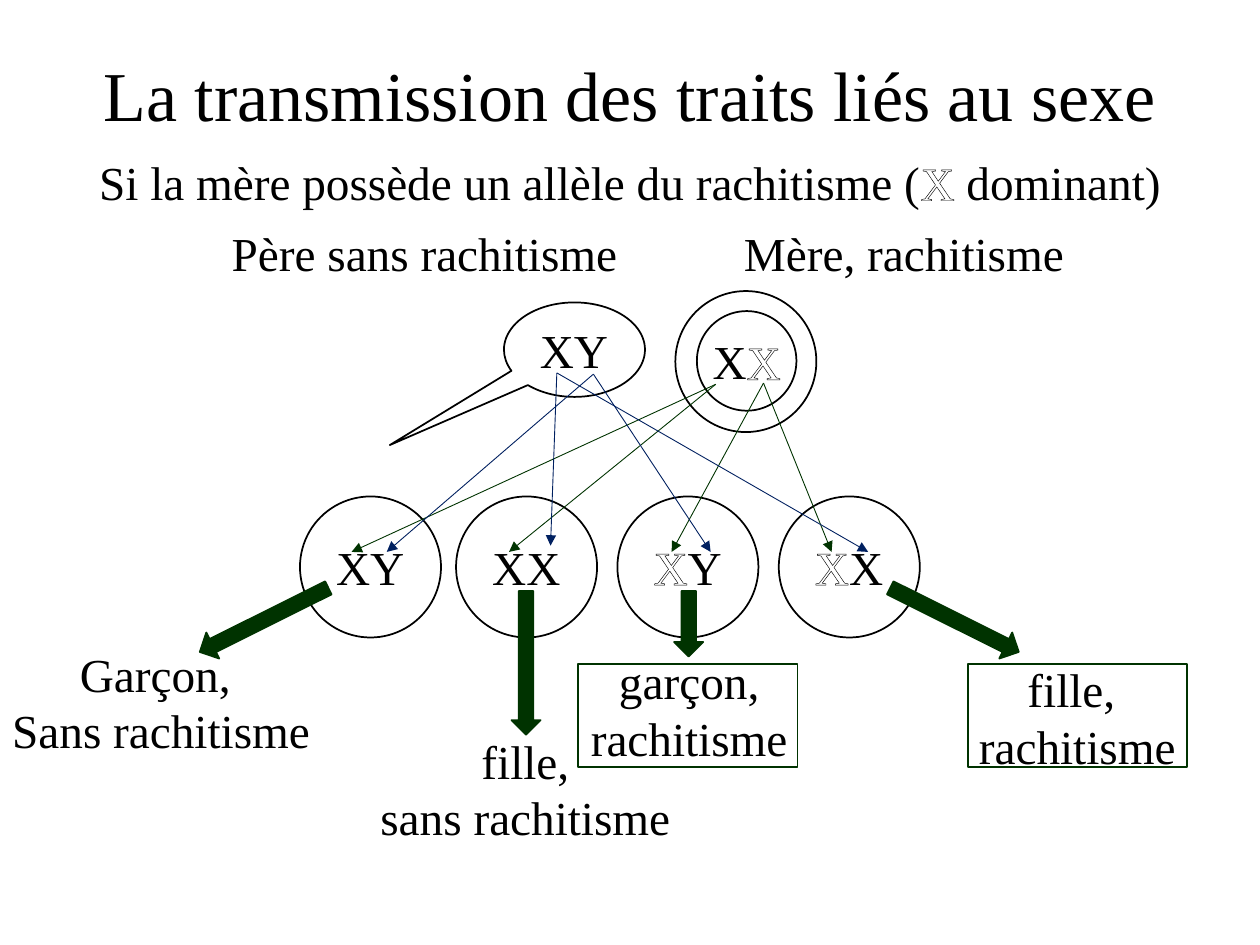
from lxml import etree
from pptx import Presentation
from pptx.dml.color import RGBColor
from pptx.enum.shapes import MSO_CONNECTOR, MSO_SHAPE
from pptx.enum.text import MSO_ANCHOR, MSO_AUTO_SIZE, PP_ALIGN
from pptx.oxml import parse_xml
from pptx.oxml.ns import nsdecls, qn
from pptx.util import Pt

ELLIPSE = MSO_SHAPE.OVAL
CALLOUT = MSO_SHAPE.OVAL_CALLOUT
RECTANGLE = MSO_SHAPE.RECTANGLE
UP_ARROW = MSO_SHAPE.UP_ARROW
STRAIGHT = MSO_CONNECTOR.STRAIGHT
CENTER = PP_ALIGN.CENTER
MIDDLE = MSO_ANCHOR.MIDDLE
GROW = MSO_AUTO_SIZE.SHAPE_TO_FIT_TEXT

BLACK, WHITE, GREEN, BLUE = "000000", "FFFFFF", "003300", "002060"


def color(value):
    return RGBColor.from_string(value)


class SlideBuilder:
    font_name = "Times New Roman"
    text_size = 27
    title_size = 40

    def __init__(self, page):
        self.page = page

    def format_span(self, span, size, ink=BLACK, outlined=False):
        values = {"name": self.font_name, "size": Pt(size)}
        for name, value in values.items():
            setattr(span.font, name, value)
        span.font.color.rgb = color(ink)
        if outlined:
            span.font._element.insert(0, parse_xml(
                f'<a:ln {nsdecls("a")} w="9525"><a:solidFill>'
                f'<a:srgbClr val="{BLACK}"/></a:solidFill></a:ln>'))

    def title(self, words, left, top, width, height):
        box = self.page.shapes.title
        values = {"left": left, "top": top, "width": width, "height": height}
        for name, value in values.items():
            setattr(box, name, Pt(value))
        box.text_frame.vertical_anchor = MIDDLE
        para = box.text_frame.paragraphs[0]
        para.alignment, para.line_spacing = CENTER, 0.9
        span = para.add_run()
        span.text = words
        self.format_span(span, self.title_size)

    def text(self, paragraphs, left, top, width, height=40.3):
        """Each paragraph is a list of (words, ink, outlined) spans."""
        box = self.page.shapes.add_textbox(Pt(left), Pt(top), Pt(width), Pt(height))
        frame = box.text_frame
        frame.word_wrap, frame.auto_size = True, GROW
        for index, spans in enumerate(paragraphs):
            para = frame.add_paragraph() if index else frame.paragraphs[0]
            para.alignment = CENTER
            for words, ink, outlined in spans:
                span = para.add_run()
                span.text = words
                self.format_span(span, self.text_size, ink, outlined)

    def plain_text(self, lines, *place):
        self.text([[(line, BLACK, False)] for line in lines], *place)

    def genotype(self, letters, left, top):
        """A lower-case x stands for the dominant allele, drawn hollow."""
        spans = [(letter.upper(), WHITE if letter == "x" else BLACK, True)
                 for letter in letters]
        self.text([spans], left, top, 56.9)

    def shape(self, kind, left, top, width, height, fill=WHITE, line=BLACK, turn=0):
        shape = self.page.shapes.add_shape(
            kind, Pt(left), Pt(top), Pt(width), Pt(height))
        shape.shadow.inherit = False
        shape.fill.solid()
        shape.fill.fore_color.rgb = color(fill)
        shape.line.color.rgb = color(line)
        shape.line.width = Pt(1)
        shape.rotation = turn
        return shape

    def arrow(self, start, end, ink):
        line = self.page.shapes.add_connector(
            STRAIGHT, *(Pt(value) for value in (*start, *end)))
        line.line.color.rgb = color(ink)
        line.line.width = Pt(0.5)
        etree.SubElement(line.line._get_or_add_ln(), qn("a:tailEnd"), type="triangle")
        etree.SubElement(line._element.spPr, qn("a:effectLst"))


def main():
    deck = Presentation()
    deck.slide_width, deck.slide_height = Pt(720), Pt(540)
    builder = SlideBuilder(deck.slides.add_slide(deck.slide_layouts[5]))

    # Frames of the affected children and the father's callout
    for left in (553, 330.5):
        builder.shape(RECTANGLE, left, 379.4, 125.3, 59, line=GREEN)
    father = builder.shape(CALLOUT, 288, 172.8, 80.6, 54)
    father.adjustments[0], father.adjustments[1] = -1.31, 1.01

    # Title and headings
    builder.title("La transmission des traits liés au sexe", 49.7, 28.8, 620.6, 55.4)
    builder.plain_text(["Mère, rachitisme"], 384.5, 124.6, 264.2)
    builder.plain_text(["Père sans rachitisme"], 115.9, 124.6, 253.4)
    builder.text([[("Si la mère possède un allèle du rachitisme (", BLACK, False),
                   ("X", WHITE, True), (" dominant)", BLACK, False)]],
                 30.2, 84.2, 659.5)

    # Parents
    builder.shape(ELLIPSE, 385.9, 166.3, 80.6, 80.6)
    builder.shape(ELLIPSE, 398.2, 177.8, 56.9, 56.9)
    builder.genotype("Xx", 398.2, 186.5)
    builder.genotype("XY", 299.5, 180)

    # Children
    for letters, left in (("XY", 171.4), ("XX", 260.6), ("xY", 352.8), ("xX", 445)):
        builder.shape(ELLIPSE, left, 283.7, 80.6, 80.6)
        builder.genotype(letters, left + 11.7, 303.8)

    # Alleles passed on: start, ink, ends
    inheritance = [
        ((409, 219.6), GREEN, [(200.9, 315.4), (290.9, 315.4)]),
        ((436.3, 218.9), GREEN, [(383.8, 315.4), (475.2, 315.4)]),
        ((318.2, 213.1), BLUE, [(496.1, 315.4), (314.6, 311.8)]),
        ((339.1, 213.8), BLUE, [(406.1, 315.4), (221, 315.4)]),
    ]
    for start, ink, ends in inheritance:
        for end in ends:
            builder.arrow(start, end, ink)

    # Outcomes
    outcomes = [
        (["Garçon, ", "Sans rachitisme"], -5.8, 365),
        (["fille,", "sans rachitisme"], 202.3, 414.7),
        (["garçon, rachitisme"], 295.9, 369.4),
        (["fille, ", "rachitisme"], 517.7, 373.7),
    ]
    for lines, left, top in outcomes:
        builder.plain_text(lines, left, top, 195.8, 72.7)

    # Block arrows to the outcomes
    for left, top, height, turn in ((537.1, 313.2, 82.1, 116.5),
                                    (142.6, 313.2, 82.1, 243.5),
                                    (292.3, 337.7, 82.1, 180),
                                    (385.2, 337.7, 37.4, 180)):
        builder.shape(UP_ARROW, left, top, 16.6, height, GREEN, GREEN, turn)

    deck.save("out.pptx")


if __name__ == "__main__":
    main()
